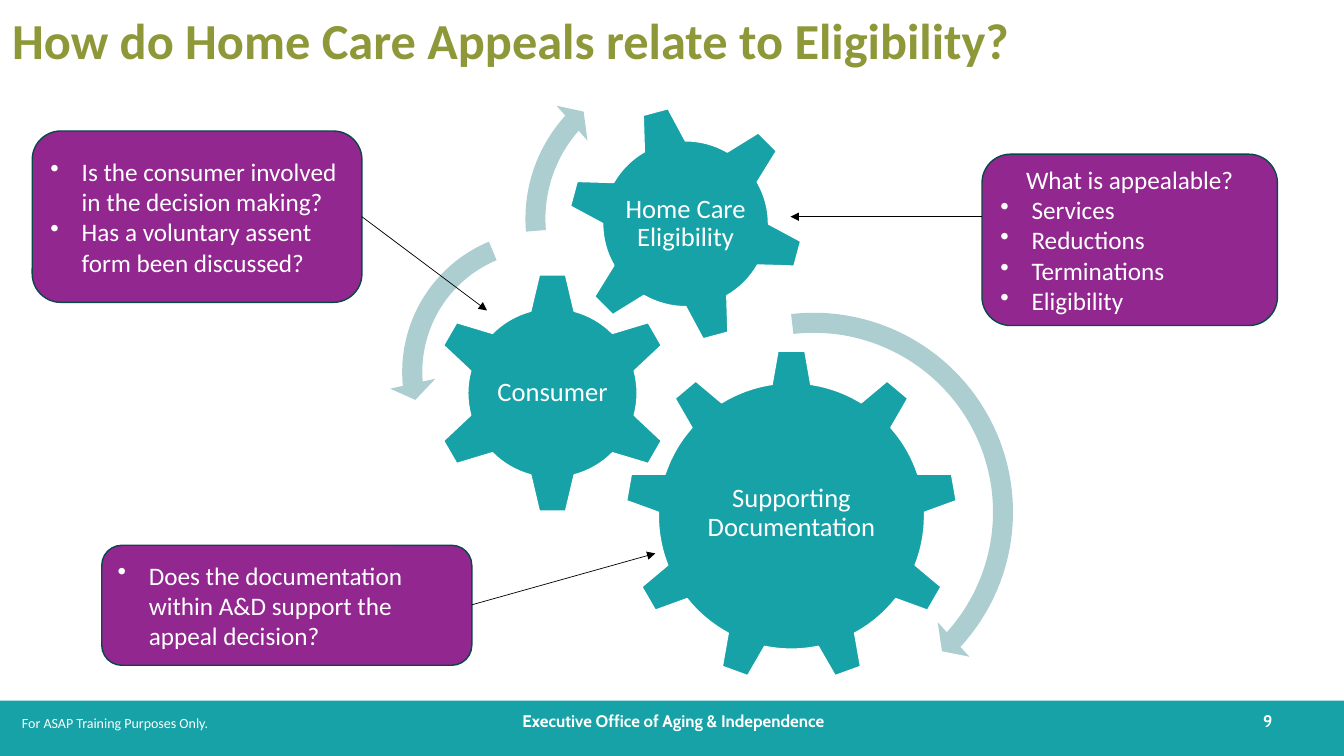
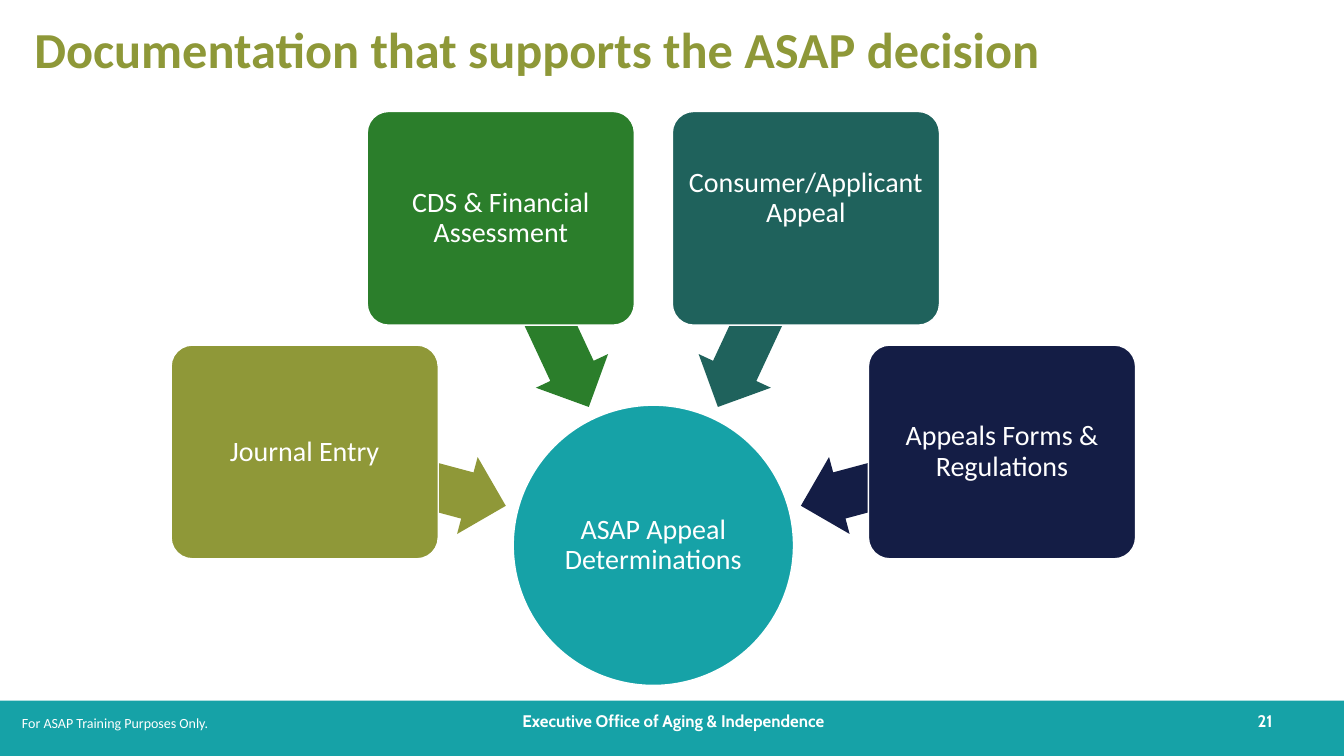
from math import cos, radians, sin

from lxml import etree
from pptx import Presentation
from pptx.dml.color import RGBColor
from pptx.enum.shapes import MSO_CONNECTOR, MSO_SHAPE
from pptx.enum.text import MSO_ANCHOR, PP_ALIGN
from pptx.oxml.ns import qn
from pptx.util import Inches, Pt

LEFT, CENTER, RIGHT = PP_ALIGN.LEFT, PP_ALIGN.CENTER, PP_ALIGN.RIGHT
TOP, MIDDLE = MSO_ANCHOR.TOP, MSO_ANCHOR.MIDDLE
RECT, ROUND, OVAL = MSO_SHAPE.RECTANGLE, MSO_SHAPE.ROUNDED_RECTANGLE, MSO_SHAPE.OVAL
GEAR6, GEAR9 = MSO_SHAPE.GEAR_6, MSO_SHAPE.GEAR_9
ARC, BACK_ARC = MSO_SHAPE.CIRCULAR_ARROW, MSO_SHAPE.LEFT_CIRCULAR_ARROW
ARROW = MSO_SHAPE.LEFT_ARROW
STRAIGHT = MSO_CONNECTOR.STRAIGHT

TEAL, PALE, OLIVE, PURPLE = "16A2A7", "ACCED0", "8E9838", "91278F"
MOSS, GREEN, PINE, NAVY = "8F9838", "2B7E2B", "1F625C", "141D45"
WHITE, BLACK, EDGE = "FFFFFF", "000000", "0A4749"


def color(text):
    return RGBColor.from_string(text)


def write(frame, *lines, size=18, font="Calibri", ink=WHITE, bold=False,
          align=CENTER, anchor=MIDDLE, inset=(0.1, 0.05, 0.1, 0.05),
          space=1.0, bullet=None):
    frame.word_wrap = True
    frame.vertical_anchor = anchor
    (frame.margin_left, frame.margin_top,
     frame.margin_right, frame.margin_bottom) = map(Inches, inset)
    for i, line in enumerate(lines):
        para = frame.paragraphs[0] if i == 0 else frame.add_paragraph()
        para.alignment = align
        para.line_spacing = space
        if bullet is not None and i >= bullet:
            para.alignment = LEFT
            props = para._p.get_or_add_pPr()
            props.set("marL", str(Inches(0.31)))
            props.set("indent", str(-Inches(0.31)))
            etree.SubElement(props, qn("a:buChar")).set("char", "•")
        run = para.add_run()
        run.text = line
        run.font.name = font
        run.font.size = Pt(size)
        run.font.bold = bold
        run.font.color.rgb = color(ink)


class Deck:
    """Holds the shared style and the slide being built."""

    def __init__(self):
        self.file = Presentation()
        self.file.slide_width = Inches(13.33)
        self.file.slide_height = Inches(7.5)

    def start(self, title, left, top, number):
        self.slide = self.file.slides.add_slide(self.file.slide_layouts[6])
        self.shape(RECT, 0, 6.95, 13.33, 0.55, TEAL)
        self.text("Executive Office of Aging & Independence", 4.43, 6.95, 4.5, 0.4,
                  size=12, font="Cabin", bold=True)
        self.text(str(number), 12.21, 6.95, 0.51, 0.4,
                  size=12, font="Cabin", bold=True, align=RIGHT)
        self.text("For ASAP Training Purposes Only.", 0.12, 7.04, 3.67, 0.27,
                  size=10, align=LEFT, anchor=TOP)
        self.text(title, left, top, 12.1, 0.44, size=36, ink=OLIVE, bold=True,
                  align=LEFT, inset=(0, 0, 0, 0))

    def text(self, words, left, top, width, height, **style):
        box = self.slide.shapes.add_textbox(
            Inches(left), Inches(top), Inches(width), Inches(height))
        write(box.text_frame, words, **style)

    def shape(self, kind, left, top, width, height, fill, line=None, turn=0, adjust=()):
        item = self.slide.shapes.add_shape(
            kind, Inches(left), Inches(top), Inches(width), Inches(height))
        item.shadow.inherit = False
        item.fill.solid()
        item.fill.fore_color.rgb = color(fill)
        if line:
            item.line.color.rgb = color(line)
            item.line.width = Pt(1)
        else:
            item.line.fill.background()
        item.rotation = turn
        for i, value in enumerate(adjust):
            item.adjustments[i] = value
        return item

    def gear(self, kind, words, x, y, size, width, height, shift=0, turn=0):
        self.shape(kind, x - size / 2, y - size / 2, size, size, TEAL, WHITE, turn)
        self.text(words, x - width / 2, y - height / 2 + shift, width, height,
                  size=19, space=0.9, inset=(0.03,) * 4)

    def arc(self, kind, left, top, size, *adjust):
        self.shape(kind, left, top, size, size, PALE, adjust=adjust)

    def note(self, left, top, width, height, *lines, bullet=0):
        item = self.shape(ROUND, left, top, width, height, PURPLE, EDGE)
        write(item.text_frame, *lines, bullet=bullet)

    def link(self, x1, y1, x2, y2):
        line = self.slide.shapes.add_connector(
            STRAIGHT, Inches(x1), Inches(y1), Inches(x2), Inches(y2))
        line.line.color.rgb = color(BLACK)
        line.line.width = Pt(0.5)
        etree.SubElement(line.line._get_or_add_ln(), qn("a:tailEnd")).set("type", "triangle")
        etree.SubElement(line._element.spPr, qn("a:effectLst"))

    def hub(self, words, x, y, size):
        item = self.shape(OVAL, x - size / 2, y - size / 2, size, size, TEAL, WHITE)
        write(item.text_frame, words, size=20, space=0.9, inset=(0.01,) * 4)

    def spoke(self, words, x, y, angle, fill, lift=0):
        dx, dy = cos(radians(angle)), sin(radians(angle))
        wide, high = 2.07, 0.79
        self.shape(ARROW, x + 2.55 * dx - wide / 2, y + 2.55 * dy - high / 2,
                   wide, high, fill, turn=angle, adjust=(0.6, 0.5))
        wide, high = 2.65, 2.12
        item = self.shape(ROUND, x + 3.58 * dx - wide / 2, y + 3.58 * dy - high / 2,
                          wide, high, fill, WHITE, adjust=(0.1,))
        write(item.text_frame, words, size=20, space=0.9,
              inset=(0.04, 0.04, 0.04, 0.04 + lift))


def main():
    deck = Deck()

    deck.start("How do Home Care Appeals relate to Eligibility?", 0.12, 0.17, 9)
    deck.gear(GEAR9, "Supporting Documentation", 7.85, 5.12, 3.3, 1.97, 1.69, shift=-0.03)
    deck.gear(GEAR6, "Consumer", 5.48, 3.9, 2.4, 1.19, 1.18)
    deck.gear(GEAR6, "Home Care Eligibility", 6.8, 2.22, 2.35, 1.32, 1.32, turn=345)
    deck.arc(ARC, 5.96, 2.97, 4.22, 0.047, 2.99, 25.402, 158.105, 0.055)
    deck.arc(BACK_ARC, 3.86, 2.16, 3.06, 0.065, 4.3, 104.891, 148.378, 0.075)
    deck.arc(ARC, 5.08, 0.52, 3.3, 0.06, 3.941, 133.138, 105.082, 0.07)
    deck.note(9.74, 1.53, 2.93, 1.7, "What is appealable?", "Services", "Reductions",
              "Terminations", "Eligibility", bullet=1)
    deck.note(0.32, 1.3, 3.27, 1.7, "Is the consumer involved in the decision making?",
              "Has a voluntary assent form been discussed?")
    deck.note(1.01, 5.41, 3.67, 1.19,
              "Does the documentation within A&D support the appeal decision?")
    deck.link(9.74, 2.15, 7.84, 2.15)
    deck.link(3.59, 2.15, 4.83, 3.08)
    deck.link(4.68, 6, 6.5, 5.49)

    deck.start("Documentation that supports the ASAP decision", 0.34, 0.26, 21)
    x, y = 6.48, 5.41
    deck.hub("ASAP Appeal Determinations", x, y, 2.78)
    deck.spoke("Journal Entry", x, y, 195, MOSS)
    deck.spoke("CDS & Financial Assessment", x, y, 245, GREEN)
    deck.spoke("Consumer/Applicant Appeal", x, y, 295, PINE, lift=0.4)
    deck.spoke("Appeals Forms & Regulations", x, y, 345, NAVY)

    deck.file.save("out.pptx")


if __name__ == "__main__":
    main()
